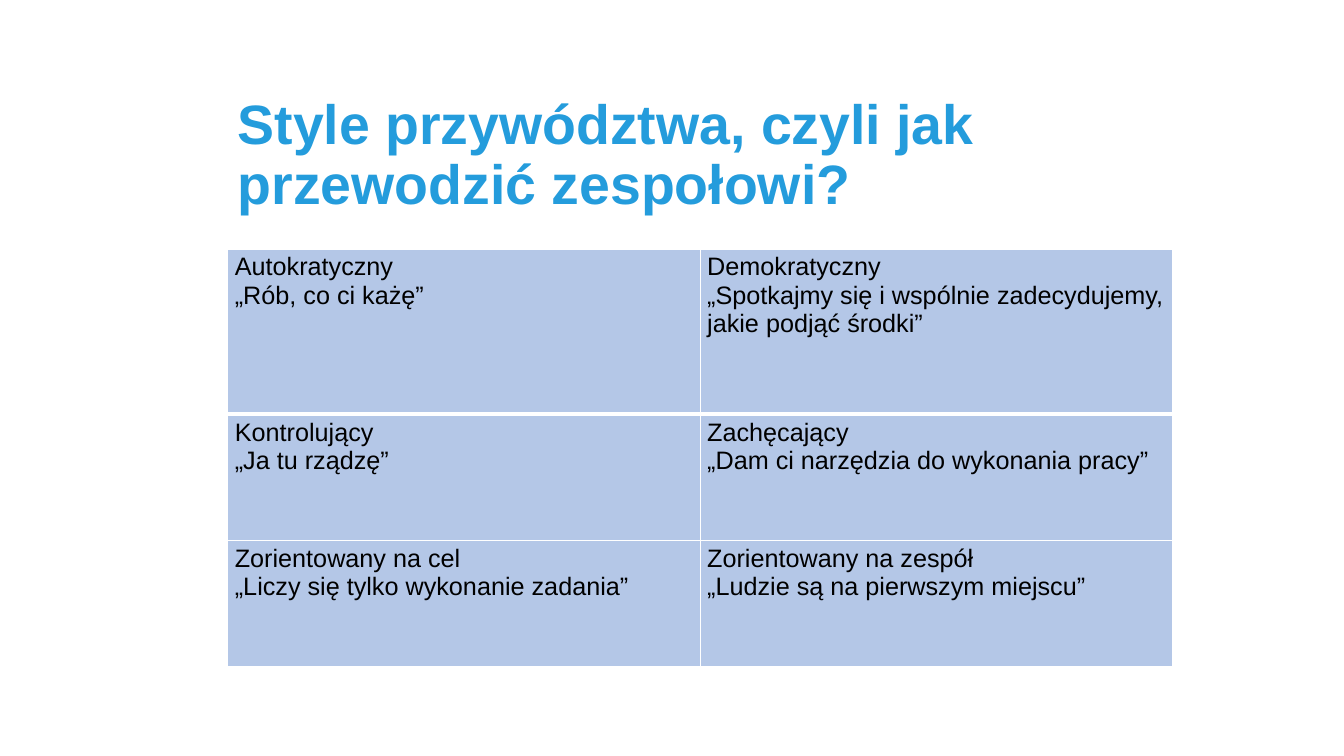
from pptx import Presentation
from pptx.util import Inches, Pt
from pptx.dml.color import RGBColor
from pptx.enum.text import MSO_ANCHOR
from lxml.etree import SubElement
from pptx.oxml.ns import qn

TITLE = "Style przywództwa, czyli jak przewodzić zespołowi?"
STYLES = [
    [("Autokratyczny", "„Rób, co ci każę”"),
     ("Demokratyczny", "„Spotkajmy się i wspólnie zadecydujemy, jakie podjąć środki”")],
    [("Kontrolujący", "„Ja tu rządzę”"),
     ("Zachęcający", "„Dam ci narzędzia do wykonania pracy”")],
    [("Zorientowany na cel", "„Liczy się tylko wykonanie zadania”"),
     ("Zorientowany na zespół", "„Ludzie są na pierwszym miejscu”")],
]
HEIGHTS = [1.64, 1.25, 1.25]
LEFT, TOP, WIDTH = 2.26, 2.47, 9.37
THEME = {
    "font": "Arial", "title": "249CDC", "text": "000000",
    "fill": "B4C7E7", "line": "FFFFFF",
    "title_size": 39.6, "text_size": 18, "thin": 1, "thick": 3,
}


def style(para, size, color, bold=False):
    for run in para.runs:
        font = run.font
        font.name = THEME["font"]
        font.size = Pt(size)
        font.bold = bold
        font.color.rgb = RGBColor.from_string(color)


def border(cell, side, width):
    props = cell._tc.get_or_add_tcPr()
    line = SubElement(props, qn(f"a:ln{side}"), w=str(Pt(width)))
    fill = SubElement(line, qn("a:solidFill"))
    SubElement(fill, qn("a:srgbClr"), val=THEME["line"])


def add_title(slide):
    box = slide.shapes.add_textbox(Inches(LEFT), Inches(0.74), Inches(7.88), Inches(1.62))
    frame = box.text_frame
    frame.word_wrap = True
    frame.vertical_anchor = MSO_ANCHOR.MIDDLE
    frame.text = TITLE
    para = frame.paragraphs[0]
    para.line_spacing = 0.9
    style(para, THEME["title_size"], THEME["title"], True)


def fill_cell(cell, lines, row):
    cell.margin_left = cell.margin_right = Inches(0.07)
    cell.margin_top = cell.margin_bottom = Inches(0.04)
    cell.text_frame.text = "\n".join(lines)
    for para in cell.text_frame.paragraphs:
        style(para, THEME["text_size"], THEME["text"])
    thin, thick = THEME["thin"], THEME["thick"]
    border(cell, "L", thin)
    border(cell, "R", thin)
    border(cell, "T", thick if row == 1 else thin)
    border(cell, "B", thick if row == 0 else thin)
    cell.fill.solid()
    cell.fill.fore_color.rgb = RGBColor.from_string(THEME["fill"])


def add_styles(slide):
    cols = len(STYLES[0])
    table = slide.shapes.add_table(
        len(STYLES), cols, Inches(LEFT), Inches(TOP),
        Inches(WIDTH), Inches(sum(HEIGHTS))).table
    table.first_row = table.horz_banding = False
    for col in table.columns:
        col.width = Inches(WIDTH / cols)
    for r, cells in enumerate(STYLES):
        table.rows[r].height = Inches(HEIGHTS[r])
        for c, lines in enumerate(cells):
            fill_cell(table.cell(r, c), lines, r)


def main():
    deck = Presentation()
    deck.slide_width, deck.slide_height = Inches(13.33), Inches(7.5)
    slide = deck.slides.add_slide(deck.slide_layouts[6])
    add_title(slide)
    add_styles(slide)
    deck.save("out.pptx")


if __name__ == "__main__":
    main()
